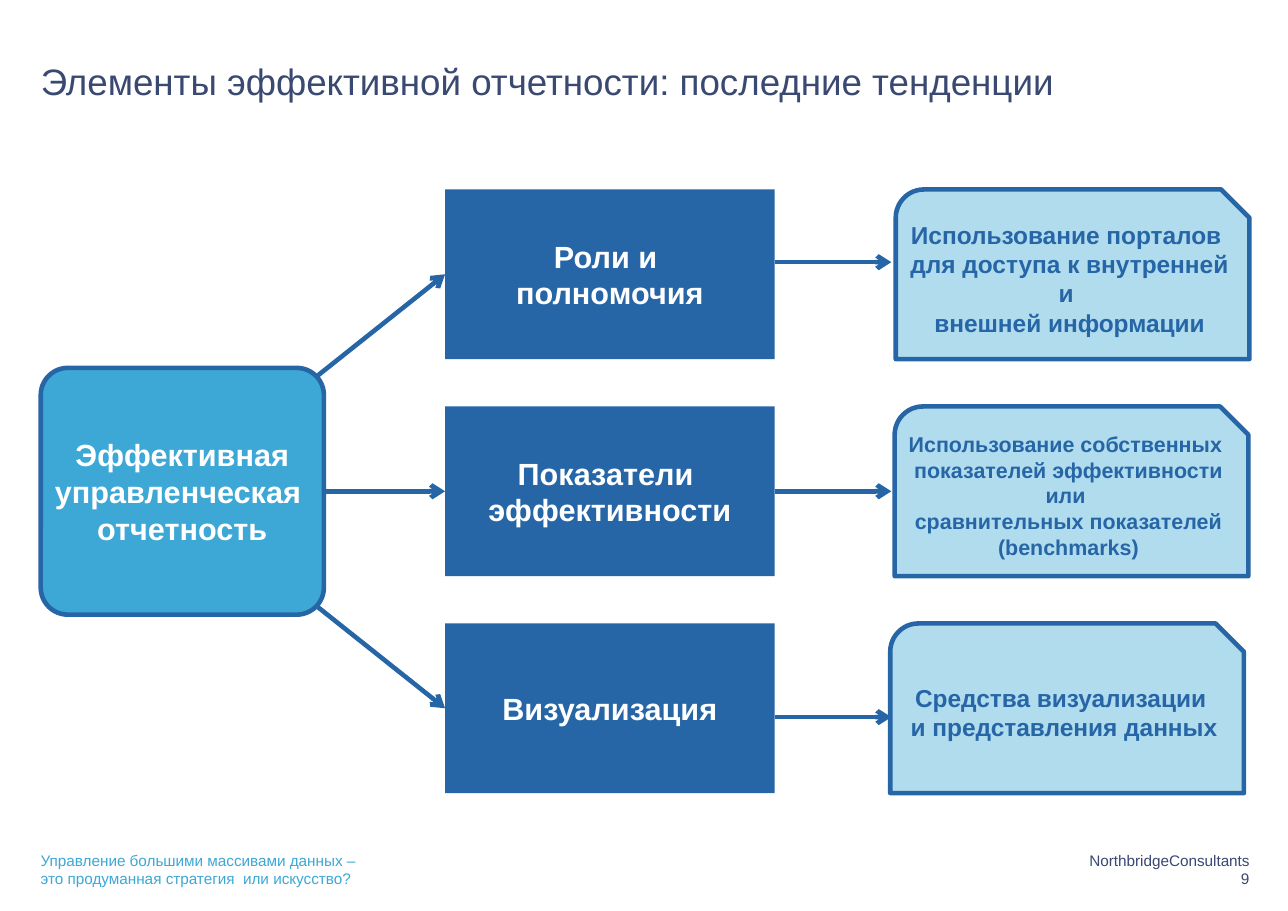
from lxml.etree import SubElement
from pptx import Presentation
from pptx.dml.color import RGBColor
from pptx.enum.shapes import MSO_CONNECTOR, MSO_SHAPE
from pptx.enum.text import MSO_ANCHOR, PP_ALIGN
from pptx.oxml.ns import qn
from pptx.util import Inches, Pt

TITLE = "Элементы эффективной отчетности: последние тенденции"
HUB = ["Эффективная управленческая ", "отчетность"]
# element lines, trend lines, trend text size, trend left, height of the arrow between them
ROWS = [
    (["Роли и ", "полномочия"],
     ["Использование порталов ", "для доступа к внутренней и ", "внешней информации"],
     16, 8.13, 2.38),
    (["Показатели ", "эффективности"],
     ["Использование собственных ", "показателей эффективности или ",
      "сравнительных показателей (benchmarks)"],
     14, 8.12, 4.46),
    (["Визуализация"],
     ["Средства визуализации ", "и представления данных"],
     16, 8.08, 6.51),
]
FOOTER = ["Управление большими массивами данных – \vэто продуманная стратегия  или искусство?"]
SIGNATURE = ["NorthbridgeConsultants", "9"]

COLORS = {"navy": "3A4972", "blue": "2666A6", "sky": "3DA8D5", "pale": "B1DCEE", "white": "FFFFFF"}

WIDTH, HEIGHT = 11.69, 8.27
MARGIN = 0.37
ROW_TOP, ROW_PITCH, BOX_HEIGHT = 1.72, 1.97, 1.54
ELEMENT_LEFT, ELEMENT_WIDTH, TREND_WIDTH = 4.04, 2.99, 3.21
HUB_TOP, HUB_WIDTH, HUB_HEIGHT = 3.34, 2.57, 2.24
HUB_MIDDLE = HUB_TOP + HUB_HEIGHT / 2
SPOKE_LEFT, SPOKE_SPREAD = 2.33, 0.61
TREND_ARROW_END = 8.09
FOOTER_TOP, FOOTER_WIDTH, FOOTER_HEIGHT = 7.77, 4.04, 0.29

presentation = Presentation()
presentation.slide_width, presentation.slide_height = Inches(WIDTH), Inches(HEIGHT)
slide = presentation.slides.add_slide(presentation.slide_layouts[6])


def color(name):
    return RGBColor.from_string(COLORS[name])


def write(shape, lines, size, ink, align, anchor, bold=False, inset=True, wrap=True):
    frame = shape.text_frame
    frame.word_wrap, frame.vertical_anchor = wrap, anchor
    if not inset:
        frame.margin_left = frame.margin_right = frame.margin_top = frame.margin_bottom = 0
    frame.text = "\n".join(lines)
    for paragraph in frame.paragraphs:
        paragraph.alignment = align
        font = paragraph.font
        font.name, font.size, font.bold = "Arial", Pt(size), bold
        font.color.rgb = color(ink)


def add_label(box, lines, size, ink, align=PP_ALIGN.LEFT, anchor=MSO_ANCHOR.BOTTOM):
    label = slide.shapes.add_textbox(*map(Inches, box))
    write(label, lines, size, ink, align, anchor, inset=False)


def add_box(kind, box, fill, lines, size, ink, outlined=True):
    """Outlined boxes wrap their text without insets; plain ones do not wrap."""
    shape = slide.shapes.add_shape(kind, *map(Inches, box))
    shape.shadow.inherit = False
    shape.fill.solid()
    shape.fill.fore_color.rgb = color(fill)
    if outlined:
        shape.line.color.rgb = color("blue")
        shape.line.width = Pt(3)
    else:
        shape.line.fill.background()
    write(shape, lines, size, ink, PP_ALIGN.CENTER, MSO_ANCHOR.MIDDLE,
          bold=True, inset=outlined is False, wrap=outlined)
    return shape


def add_arrow(start, end):
    arrow = slide.shapes.add_connector(MSO_CONNECTOR.STRAIGHT, *map(Inches, start + end))
    arrow.line.color.rgb = color("blue")
    arrow.line.width = Pt(3)
    SubElement(arrow.line._get_or_add_ln(), qn("a:tailEnd"), type="arrow")
    SubElement(arrow._element.spPr, qn("a:effectLst"))
    return arrow


add_label((WIDTH - 0.35 - FOOTER_WIDTH, FOOTER_TOP, FOOTER_WIDTH, FOOTER_HEIGHT),
          SIGNATURE, 10, "navy", align=PP_ALIGN.RIGHT)
add_label((MARGIN, FOOTER_TOP, FOOTER_WIDTH, FOOTER_HEIGHT), FOOTER, 10, "sky")
add_label((MARGIN, 0.53, 10.98, 0.67), [TITLE], 24, "navy", anchor=MSO_ANCHOR.TOP)

# Arrows come first so that the boxes cover their starts
row_tops = [ROW_TOP + row * ROW_PITCH for row in range(len(ROWS))]
spokes = [add_arrow((SPOKE_LEFT, HUB_MIDDLE + (row - 1) * SPOKE_SPREAD),
                    (ELEMENT_LEFT, top + BOX_HEIGHT / 2))
          for row, top in enumerate(row_tops)]
trend_arrows = [add_arrow((ELEMENT_LEFT + ELEMENT_WIDTH, arrow_y), (TREND_ARROW_END, arrow_y))
                for *_, arrow_y in ROWS]

hub = add_box(MSO_SHAPE.ROUNDED_RECTANGLE, (MARGIN, HUB_TOP, HUB_WIDTH, HUB_HEIGHT),
              "sky", HUB, 20, "white")
hub.adjustments[0] = 0.11
elements = []
for top, (element, trend, trend_size, trend_left, _) in zip(row_tops, ROWS):
    elements.append(add_box(MSO_SHAPE.RECTANGLE, (ELEMENT_LEFT, top, ELEMENT_WIDTH, BOX_HEIGHT),
                            "blue", element, 20, "white", outlined=False))
    add_box(MSO_SHAPE.SNIP_ROUND_RECTANGLE, (trend_left, top, TREND_WIDTH, BOX_HEIGHT),
            "pale", trend, trend_size, "blue")

for spoke, element in zip(spokes, elements):
    spoke.end_connect(element, 1)
spokes[1].begin_connect(hub, 3)
trend_arrows[1].begin_connect(elements[1], 3)

presentation.save("out.pptx")
